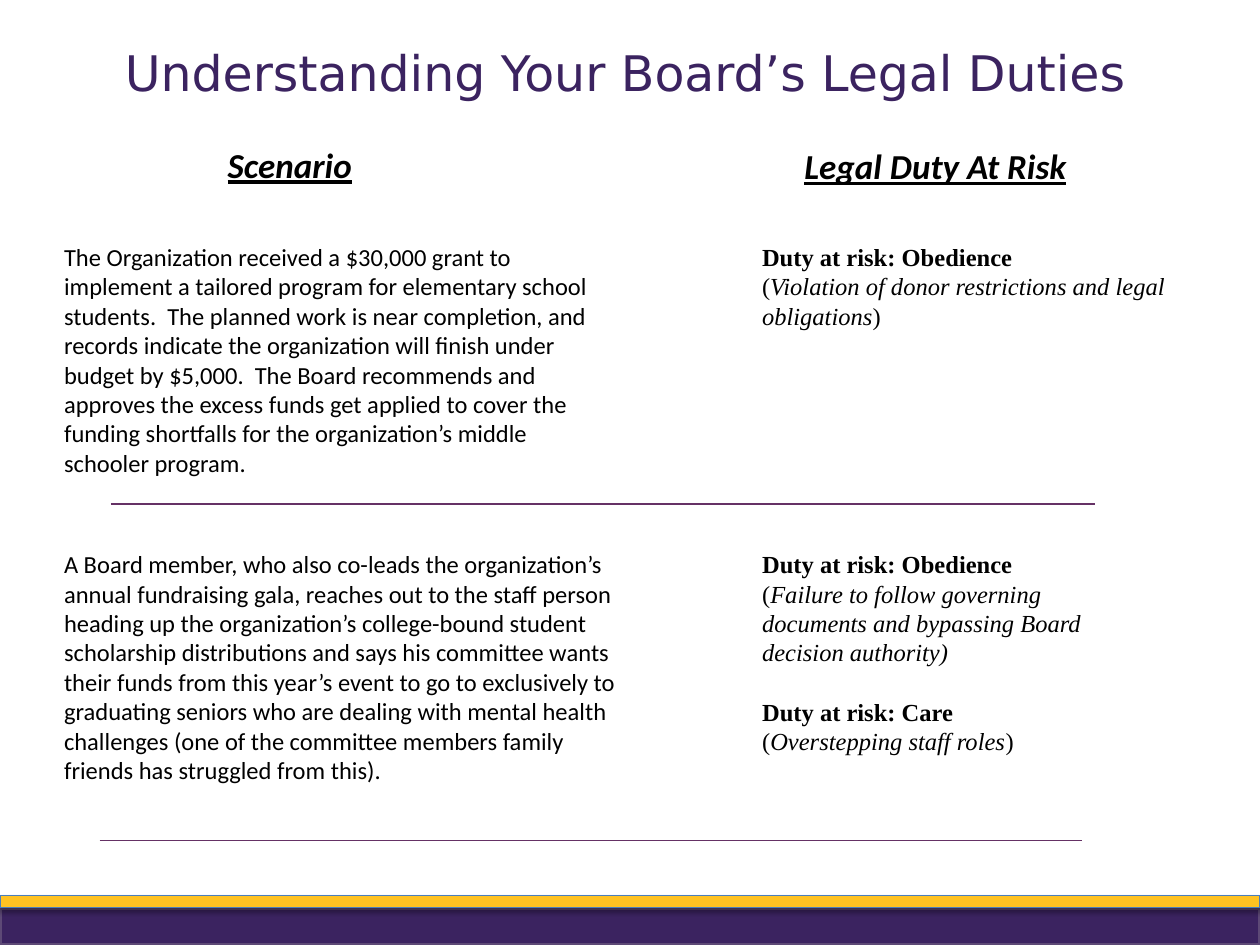
from lxml import etree
from pptx import Presentation
from pptx.dml.color import RGBColor
from pptx.enum.shapes import MSO_CONNECTOR as Connector, MSO_SHAPE as Shape
from pptx.enum.text import MSO_ANCHOR as Anchor, MSO_AUTO_SIZE as AutoSize, PP_ALIGN as Align
from pptx.oxml import parse_xml
from pptx.oxml.ns import nsdecls, qn
from pptx.util import Inches, Pt

COLORS = {
    "purple": "3B2360",
    "purple_edge": "5D4976",
    "gold": "FFC222",
    "gold_edge": "4A7EBB",
    "divider": "653165",
    "text": "000000",
}

SCENARIO_LEFT, DUTY_LEFT = 0.41, 5.95

# Each row: top, scenario, width of the duty column, duties as (name, reason, closing)
ROWS = [
    (1.87,
     "The Organization received a $30,000 grant to implement a tailored program for "
     "elementary school students.  The planned work is near completion, and records "
     "indicate the organization will finish under budget by $5,000.  The Board recommends "
     "and approves the excess funds get applied to cover the funding shortfalls for the "
     "organization’s middle schooler program.",
     3.54,
     [("Obedience", "Violation of donor restrictions and legal obligations", ")")]),
    (4.31,
     "A Board member, who also co-leads the organization’s annual fundraising gala, reaches "
     "out to the staff person heading up the organization’s college-bound student scholarship "
     "distributions and says his committee wants their funds from this year’s event to go to "
     "exclusively to graduating seniors who are dealing with mental health challenges (one of "
     "the committee members family friends has struggled from this).",
     3.12,
     [("Obedience", "Failure to follow governing documents and bypassing Board decision "
       "authority)", ""),
      ("Care", "Overstepping staff roles", ")")]),
]


def color(name):
    return RGBColor.from_string(COLORS[name])


def style(paragraph, face, size, tint="text"):
    font = paragraph.font
    font.name, font.size = face, Pt(size)
    font.color.rgb = color(tint)


def add_frame(slide, left, top, width, height):
    box = slide.shapes.add_textbox(Inches(left), Inches(top), Inches(width), Inches(height))
    frame = box.text_frame
    frame.word_wrap = True
    frame.auto_size = AutoSize.SHAPE_TO_FIT_TEXT
    return frame


def add_band(slide, top, height, fill, edge, edge_width):
    band = slide.shapes.add_shape(
        Shape.RECTANGLE, 0, Inches(top), Inches(10), Inches(height))
    band.shadow.inherit = False
    band.fill.solid()
    band.fill.fore_color.rgb = color(fill)
    band.line.color.rgb = color(edge)
    band.line.width = Pt(edge_width)
    return band


def add_drop_shadow(band):
    effects = band._element.spPr.find(qn("a:effectLst"))
    effects.append(parse_xml(
        f'<a:outerShdw {nsdecls("a")} blurRad="{Pt(3)}" dist="{Pt(1.8)}" dir="5400000" '
        'rotWithShape="0"><a:srgbClr val="000000"><a:alpha val="35000"/></a:srgbClr>'
        '</a:outerShdw>'))


def add_title(slide, text):
    frame = add_frame(slide, 0, 0.26, 9.92, 0.63)
    frame.auto_size = AutoSize.NONE
    frame.vertical_anchor = Anchor.MIDDLE
    frame.margin_left = frame.margin_right = Inches(0.05)
    title = frame.paragraphs[0]
    title.text, title.alignment = text, Align.CENTER
    style(title, "DejaVu Sans", 28, "purple")


def add_heading(slide, text, left, top, width):
    heading = add_frame(slide, left, top, width, 0.44).paragraphs[0]
    heading.text, heading.alignment = text, Align.CENTER
    style(heading, "Calibri", 20)
    heading.font.bold = heading.font.italic = heading.font.underline = True


def add_scenario(slide, text, top):
    scenario = add_frame(slide, SCENARIO_LEFT, top, 4.59, 1.99).paragraphs[0]
    scenario.text = text
    style(scenario, "Calibri", 14)


def add_duties(slide, duties, top, width):
    frame = add_frame(slide, DUTY_LEFT, top, width, 0.81 if len(duties) == 1 else 1.75)
    for index, (name, reason, closing) in enumerate(duties):
        duty = frame.add_paragraph() if index else frame.paragraphs[0]
        if index:
            duty.space_before = Pt(17)
        style(duty, "Times New Roman", 14)
        label = duty.add_run()
        label.text = f"Duty at risk: {name}"
        label.font.bold = True
        duty.add_line_break()
        for text, italic in (("(", False), (reason, True), (closing, False)):
            if text:
                part = duty.add_run()
                part.text = text
                part.font.italic = italic


def add_divider(slide, left, right, y):
    divider = slide.shapes.add_connector(
        Connector.STRAIGHT, Inches(left), Inches(y), Inches(right), Inches(y))
    divider.line.color.rgb = color("divider")
    divider.line.width = Pt(0.75)
    etree.SubElement(divider._element.spPr, qn("a:effectLst"))


def main():
    deck = Presentation()
    deck.slide_width, deck.slide_height = Inches(10), Inches(7.5)
    slide = deck.slides.add_slide(deck.slide_layouts[6])

    # Footer bands
    add_band(slide, 7.21, 0.29, "purple", "purple_edge", 2)
    add_drop_shadow(add_band(slide, 7.11, 0.09, "gold", "gold_edge", 0.75))

    # Title and column headings
    add_title(slide, "Understanding Your Board’s Legal Duties")
    add_heading(slide, "Scenario", 1.28, 1.09, 2.04)
    add_heading(slide, "Legal Duty At Risk", 6.26, 1.1, 2.33)

    # Scenarios and the duties they put at risk
    for top, scenario, duty_width, duties in ROWS:
        add_scenario(slide, scenario, top)
        add_duties(slide, duties, top, duty_width)

    # Dividers below each row
    add_divider(slide, 0.88, 8.69, 4)
    add_divider(slide, 0.79, 8.59, 6.67)

    deck.save("out.pptx")


if __name__ == "__main__":
    main()
